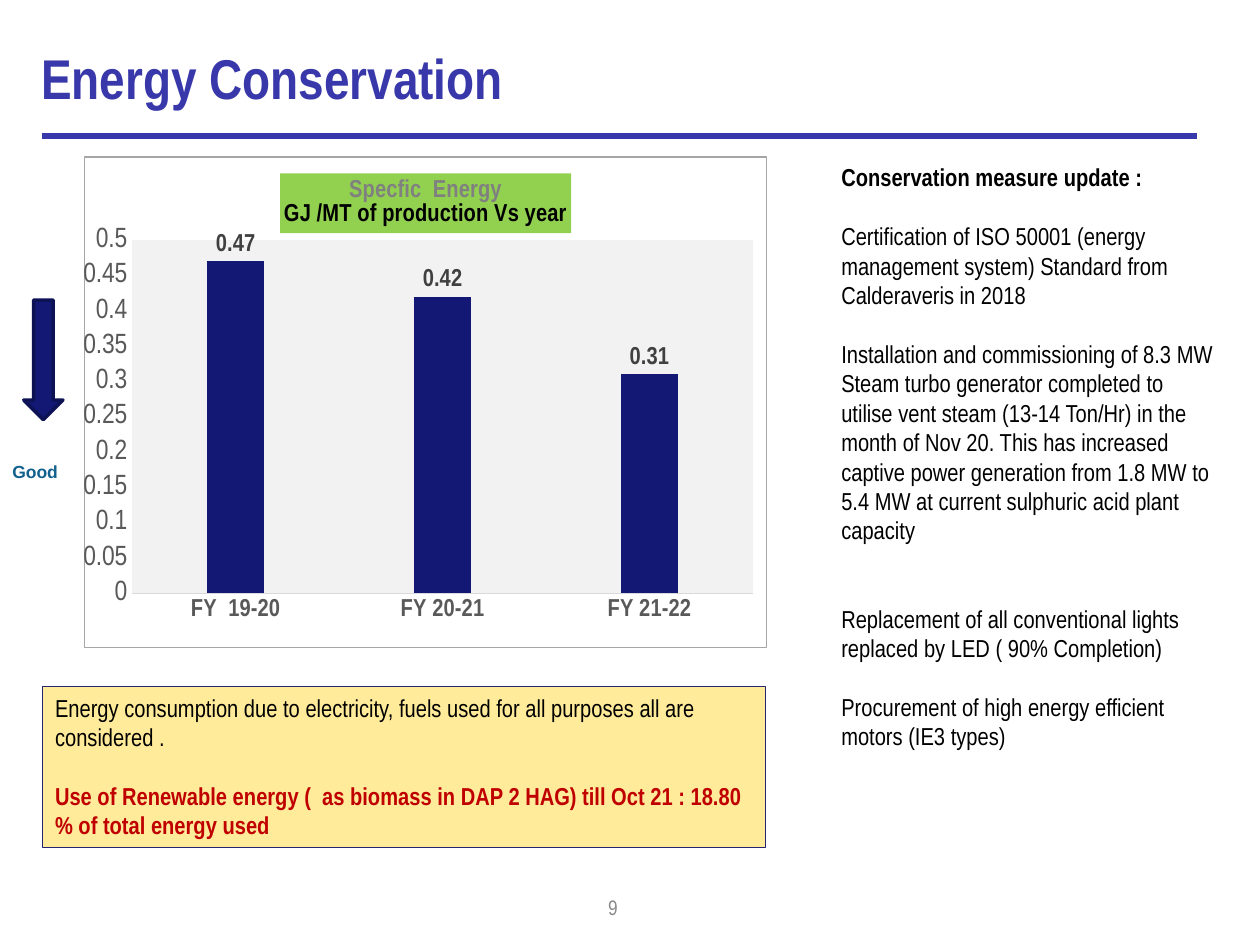
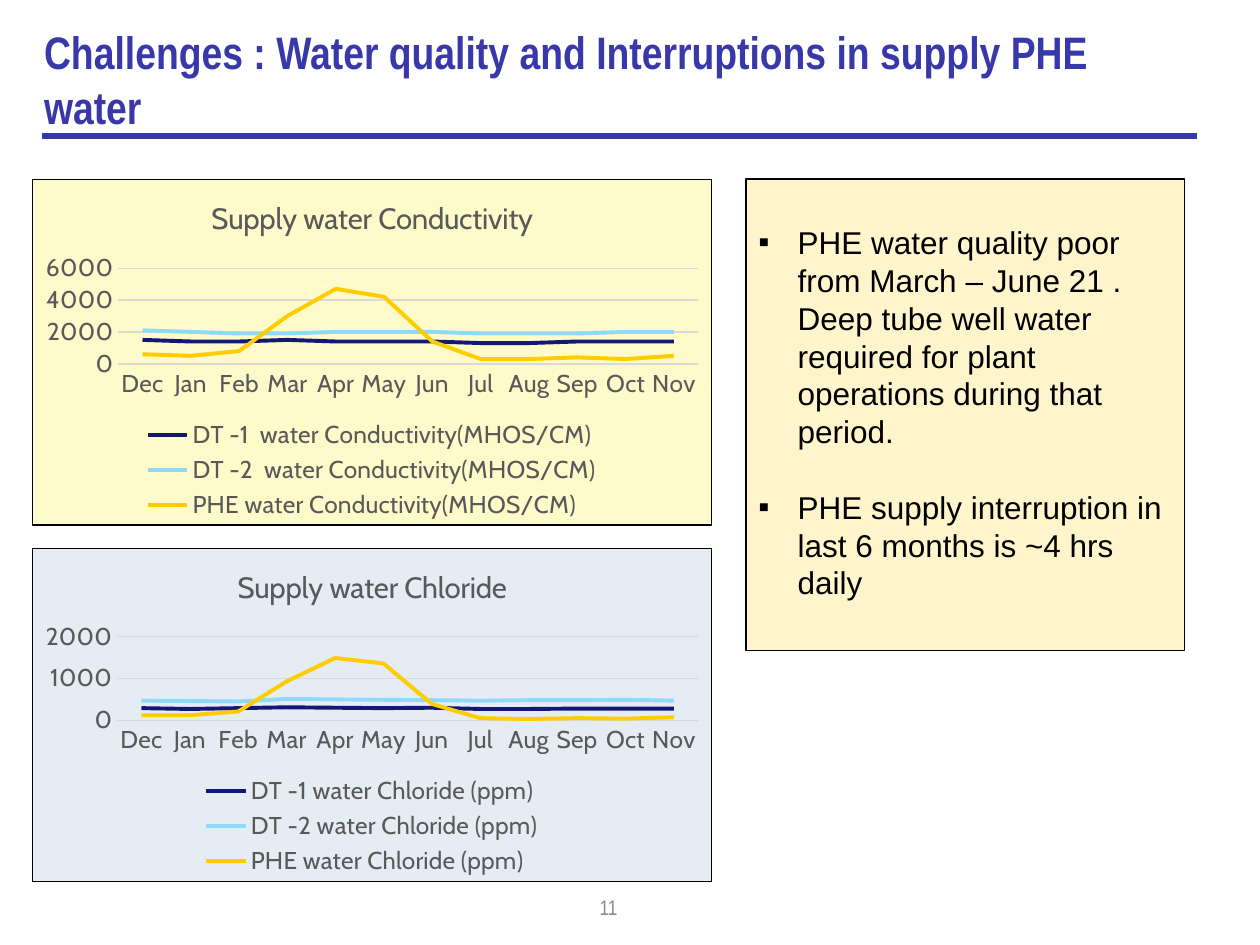
from dataclasses import dataclass

from pptx import Presentation
from pptx import util as u
from pptx.chart import data as chart_data
from pptx.dml import color
from pptx.enum import chart as ch
from pptx.enum import shapes, text
from pptx.oxml import ns, parse_xml


@dataclass(frozen=True)
class Theme:
    narrow: str = "Arial Narrow"
    plain: str = "Arial"
    chart: str = "Cabin"
    black: str = "000000"
    white: str = "FFFFFF"
    title: str = "3838AA"
    navy: str = "121873"
    navy_dark: str = "0D1255"
    sky: str = "8FD9FB"
    gold: str = "FFCC00"
    red: str = "C00000"
    teal: str = "11618F"
    green: str = "92D050"
    axis_text: str = "595959"
    label_text: str = "404040"
    faint_text: str = "808080"
    page_text: str = "898989"
    axis_line: str = "D9D9D9"
    plot_fill: str = "F2F2F2"
    chart_border: str = "A6A6A6"
    note_fill: str = "FFEB99"
    note_line: str = "262572"
    water_fill: str = "FFF5CC"
    conductivity_fill: str = "FEFAC9"
    chloride_fill: str = "E6ECF3"
    title_size: float = 32
    long_title_size: float = 26
    water_size: float = 18
    chart_title_size: float = 16.8
    axis_size: float = 16
    body_size: float = 14
    page_size: float = 12
    small_size: float = 10
    leading: float = 1.2
    hairline: float = 0.75


THEME = Theme()


@dataclass(frozen=True)
class Frame:
    left: float
    top: float
    width: float
    height: float

    def lengths(self) -> tuple:
        return tuple(u.Cm(v) for v in (self.left, self.top, self.width, self.height))


@dataclass(frozen=True)
class Style:
    size: float
    hue: str = THEME.black
    bold: bool = False
    font: str = THEME.narrow


@dataclass(frozen=True)
class Line:
    words: str
    style: Style
    gap_lines: int = 0
    bullet: str = ""
    align: text.PP_ALIGN = text.PP_ALIGN.LEFT


@dataclass(frozen=True)
class WaterChart:
    title: str
    frame: Frame
    fill: str
    top_value: int
    step: int
    series: dict


BODY = Style(THEME.body_size)
BODY_BOLD = Style(THEME.body_size, bold=True)
BODY_RED = Style(THEME.body_size, THEME.red, True)
WATER = Style(THEME.water_size, font=THEME.plain)
AXIS = Style(THEME.body_size, THEME.axis_text, font=THEME.chart)

MEASURES = [
    Line("Conservation measure update :", BODY_BOLD),
    Line("Certification of ISO 50001 (energy management system) Standard from "
         "Calderaveris in 2018", BODY, 1),
    Line("Installation and commissioning of 8.3 MW Steam turbo generator completed to "
         "utilise vent steam (13-14 Ton/Hr) in the month of Nov 20. This has increased "
         "captive power generation from 1.8 MW to 5.4 MW at current sulphuric acid plant "
         "capacity", BODY, 1),
    Line("Replacement of all conventional lights replaced by LED ( 90% Completion)", BODY, 2),
    Line("Procurement of high energy efficient motors (IE3 types)", BODY, 1),
]
ENERGY_NOTE = [
    Line("Energy consumption due to electricity, fuels used for all purposes all are "
         "considered .", BODY),
    Line("Use of Renewable energy (  as biomass in DAP 2 HAG) till Oct 21 : 18.80 % of "
         "total energy used", BODY_RED, 1),
]
WATER_NOTE = [
    Line("PHE water quality poor from March – June 21 . Deep tube well water required for "
         "plant operations during that period.", WATER, bullet="▪"),
    Line("PHE supply interruption in last 6 months is ~4 hrs daily", WATER, 1, "▪"),
]
MONTHS = "Dec Jan Feb Mar Apr May Jun Jul Aug Sep Oct Nov".split()
WATER_CHARTS = [
    WaterChart("Supply water Conductivity", Frame(0.64, 3.61, 13.72, 6.99),
               THEME.conductivity_fill, 6000, 2000, {
        "DT -1  water Conductivity(MHOS/CM)":
            [1500, 1400, 1400, 1500, 1400, 1400, 1400, 1300, 1300, 1400, 1400, 1400],
        "DT -2  water Conductivity(MHOS/CM)":
            [2100, 2000, 1900, 1900, 2000, 2000, 2000, 1900, 1900, 1900, 2000, 2000],
        "PHE water Conductivity(MHOS/CM)":
            [600, 500, 800, 3000, 4700, 4200, 1400, 300, 300, 400, 300, 500]}),
    WaterChart("Supply water Chloride", Frame(0.64, 11.05, 13.72, 6.73),
               THEME.chloride_fill, 2000, 1000, {
        "DT -1 water Chloride (ppm)":
            [290, 270, 290, 310, 300, 290, 300, 270, 270, 280, 280, 280],
        "DT -2 water Chloride (ppm)":
            [470, 460, 450, 510, 500, 490, 480, 470, 480, 480, 490, 470],
        "PHE water Chloride (ppm)":
            [120, 120, 210, 930, 1490, 1360, 390, 50, 30, 50, 40, 70]}),
]


def rgb(value: str) -> color.RGBColor:
    return color.RGBColor.from_string(value)


def apply_font(font, style: Style) -> None:
    font.name, font.size, font.bold = style.font, u.Pt(style.size), style.bold
    font.color.rgb = rgb(style.hue)


def paint_line(line, hue: str, width: float = THEME.hairline) -> None:
    line.color.rgb = rgb(hue)
    line.width = u.Pt(width)


def paint_fill(fill, hue: str) -> None:
    fill.solid()
    fill.fore_color.rgb = rgb(hue)


def write_lines(box, lines: list[Line], anchor=text.MSO_ANCHOR.TOP) -> None:
    frame = box.text_frame
    frame.word_wrap = True
    frame.vertical_anchor = anchor
    for index, line in enumerate(lines):
        para = frame.add_paragraph() if index else frame.paragraphs[0]
        pitch = line.style.size * THEME.leading
        para.alignment = line.align
        para.line_spacing = u.Pt(pitch)
        if line.gap_lines:
            para.space_before = u.Pt(pitch * line.gap_lines)
        if line.bullet:
            props = para._p.get_or_add_pPr()
            props.set("marL", str(u.Cm(0.79)))
            props.set("indent", str(-u.Cm(0.79)))
            props.append(parse_xml(f'<a:buFont {ns.nsdecls("a")} typeface="{THEME.plain}"/>'))
            props.append(parse_xml(f'<a:buChar {ns.nsdecls("a")} char="{line.bullet}"/>'))
        span = para.add_run()
        span.text = line.words
        apply_font(span.font, line.style)


def add_text(page, frame: Frame, lines: list[Line], anchor=text.MSO_ANCHOR.TOP) -> None:
    write_lines(page.shapes.add_textbox(*frame.lengths()), lines, anchor)


def add_panel(page, frame: Frame, fill: str, line: str, width: float = THEME.hairline,
              kind=shapes.MSO_SHAPE.RECTANGLE):
    panel = page.shapes.add_shape(kind, *frame.lengths())
    panel.shadow.inherit = False
    paint_fill(panel.fill, fill)
    paint_line(panel.line, line, width)
    return panel


def add_page(deck, title: str, frame: Frame, size: float, anchor, number: int):
    page = deck.slides.add_slide(deck.slide_layouts[6])
    rule = page.shapes.add_connector(shapes.MSO_CONNECTOR.STRAIGHT,
                                     u.Cm(0.84), u.Cm(2.74), u.Cm(24.13), u.Cm(2.74))
    paint_line(rule.line, THEME.title, 3)
    rule._element.spPr.append(parse_xml(f'<a:effectLst {ns.nsdecls("a")}/>'))
    add_text(page, Frame(6.78, 17.78, 5.92, 1.02),
             [Line(str(number), Style(THEME.page_size, THEME.page_text),
                   align=text.PP_ALIGN.RIGHT)], text.MSO_ANCHOR.MIDDLE)
    add_text(page, frame, [Line(title, Style(size, THEME.title, True))], anchor)
    return page


def area_properties(fill: str, border: str = ""):
    line = (f'<a:solidFill><a:srgbClr val="{border}"/></a:solidFill>'
            if border else "<a:noFill/>")
    return parse_xml(f'<c:spPr {ns.nsdecls("c", "a")}><a:solidFill><a:srgbClr val="{fill}"/>'
                     f'</a:solidFill><a:ln w="{u.Pt(THEME.hairline)}">{line}</a:ln></c:spPr>')


def set_plot_area(chart, fill: str, **layout: float) -> None:
    area = chart._chartSpace.find(".//" + ns.qn("c:plotArea"))
    for old in area.findall(ns.qn("c:layout")):
        area.remove(old)
    sizes = "".join(f'<c:{key} val="{value}"/>' for key, value in layout.items())
    area.insert(0, parse_xml(
        f'<c:layout {ns.nsdecls("c")}><c:manualLayout><c:layoutTarget val="inner"/>'
        f'<c:xMode val="edge"/><c:yMode val="edge"/>{sizes}</c:manualLayout></c:layout>'))
    area.append(area_properties(fill))


def add_chart(page, frame: Frame, kind, categories: list[str], series: dict,
              fill: str, border: str, title: list[Line], top_value: float, step: float,
              category_style: Style, value_style: Style):
    data = chart_data.CategoryChartData()
    data.categories = categories
    for name, values in series.items():
        data.add_series(name, values)
    chart = page.shapes.add_chart(kind, *frame.lengths(), data).chart
    chart._chartSpace.find(ns.qn("c:chart")).addnext(area_properties(fill, border))
    apply_font(chart.font, Style(THEME.small_size, font=THEME.chart))
    heading = chart.chart_title.text_frame
    for index, line in enumerate(title):
        para = heading.add_paragraph() if index else heading.paragraphs[0]
        span = para.add_run()
        span.text = line.words
        apply_font(span.font, line.style)
    chart.chart_title.include_in_layout = False
    for axis, style in ((chart.category_axis, category_style),
                        (chart.value_axis, value_style)):
        axis.major_tick_mark = axis.minor_tick_mark = ch.XL_TICK_MARK.NONE
        apply_font(axis.tick_labels.font, style)
    paint_line(chart.category_axis.format.line, THEME.axis_line)
    values = chart.value_axis
    values.format.line.fill.background()
    values.minimum_scale, values.maximum_scale, values.major_unit = 0, top_value, step
    values.tick_labels.number_format = "General"
    values.tick_labels.number_format_is_linked = False
    return chart


def add_energy_chart(page) -> None:
    chart = add_chart(
        page, Frame(1.68, 3.15, 13.79, 9.91), ch.XL_CHART_TYPE.COLUMN_CLUSTERED,
        ["FY  19-20", "FY 20-21", "FY 21-22"], {"Series 1": [0.47, 0.42, 0.31]},
        THEME.white, THEME.chart_border,
        [Line("Specfic  Energy", Style(THEME.body_size, THEME.faint_text, True)),
         Line("GJ /MT of production Vs year", BODY_BOLD)], 0.5, 0.05,
        Style(THEME.body_size, THEME.axis_text, True), Style(THEME.axis_size, THEME.axis_text))
    chart.has_legend = False
    chart.value_axis.has_major_gridlines = False
    paint_fill(chart.chart_title.format.fill, THEME.green)
    set_plot_area(chart, THEME.plot_fill, x=0.07, y=0.17, w=0.91, h=0.72)
    plot = chart.plots[0]
    plot.gap_width, plot.overlap, plot.vary_by_categories = 267, -43, False
    paint_fill(plot.series[0].format.fill, THEME.navy)
    plot.has_data_labels = True
    labels = plot.data_labels
    labels.show_value = True
    labels.number_format, labels.number_format_is_linked = "0.00", False
    labels.position = ch.XL_LABEL_POSITION.OUTSIDE_END
    apply_font(labels.font, Style(THEME.body_size, THEME.label_text, True))


def add_water_chart(page, water: WaterChart) -> None:
    title = Line(water.title, Style(THEME.chart_title_size, THEME.axis_text, font=THEME.chart))
    chart = add_chart(page, water.frame, ch.XL_CHART_TYPE.LINE, MONTHS, water.series,
                      water.fill, THEME.black, [title], water.top_value, water.step, AXIS, AXIS)
    chart.has_legend = True
    chart.legend.position = ch.XL_LEGEND_POSITION.BOTTOM
    chart.legend.include_in_layout = False
    apply_font(chart.legend.font, AXIS)
    paint_line(chart.value_axis.major_gridlines.format.line, THEME.axis_line)
    chart.plots[0].vary_by_categories = False
    for series, hue in zip(chart.plots[0].series, (THEME.navy, THEME.sky, THEME.gold)):
        series.smooth = False
        series.marker.style = ch.XL_MARKER_STYLE.NONE
        paint_line(series.format.line, hue, 2.25)


def build_energy_page(deck) -> None:
    page = add_page(deck, "Energy Conservation", Frame(0.58, 0.46, 22.86, 1.9),
                    THEME.title_size, text.MSO_ANCHOR.BOTTOM, 9)
    measures = add_panel(page, Frame(16.71, 3.15, 8.05, 13.94), THEME.white, THEME.white)
    write_lines(measures, MEASURES)
    note = add_panel(page, Frame(0.86, 13.84, 14.58, 3.25), THEME.note_fill, THEME.note_line)
    write_lines(note, ENERGY_NOTE)
    add_panel(page, Frame(0.48, 6.05, 0.79, 2.41), THEME.navy, THEME.navy_dark, 2,
              shapes.MSO_SHAPE.DOWN_ARROW)
    add_text(page, Frame(0, 9.17, 1.7, 0.69),
             [Line("Good", Style(THEME.small_size, THEME.teal, True, THEME.plain))])
    add_energy_chart(page)


def build_water_page(deck) -> None:
    page = add_page(deck, "Challenges : Water quality and Interruptions in supply PHE water",
                    Frame(0.64, 0, 22.86, 3.18), THEME.long_title_size,
                    text.MSO_ANCHOR.MIDDLE, 11)
    for water in WATER_CHARTS:
        add_water_chart(page, water)
    note = add_panel(page, Frame(15.04, 3.61, 8.84, 9.5), THEME.water_fill, THEME.black)
    note.text_frame.margin_top = u.Cm(0.89)
    write_lines(note, WATER_NOTE)


def main() -> None:
    deck = Presentation()
    deck.slide_width, deck.slide_height = u.Cm(25.4), u.Cm(19.05)
    build_energy_page(deck)
    build_water_page(deck)
    deck.save("out.pptx")


if __name__ == "__main__":
    main()
